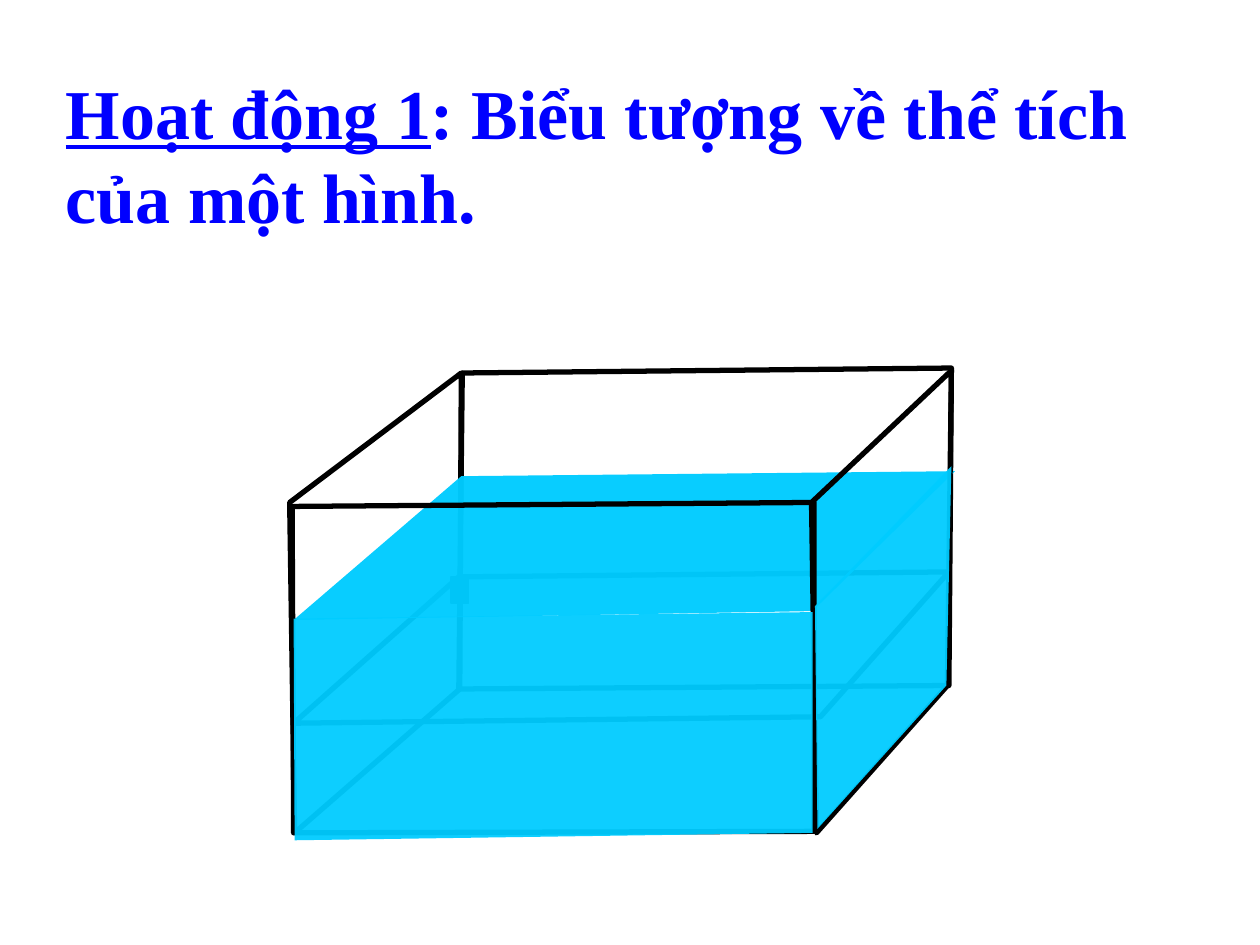
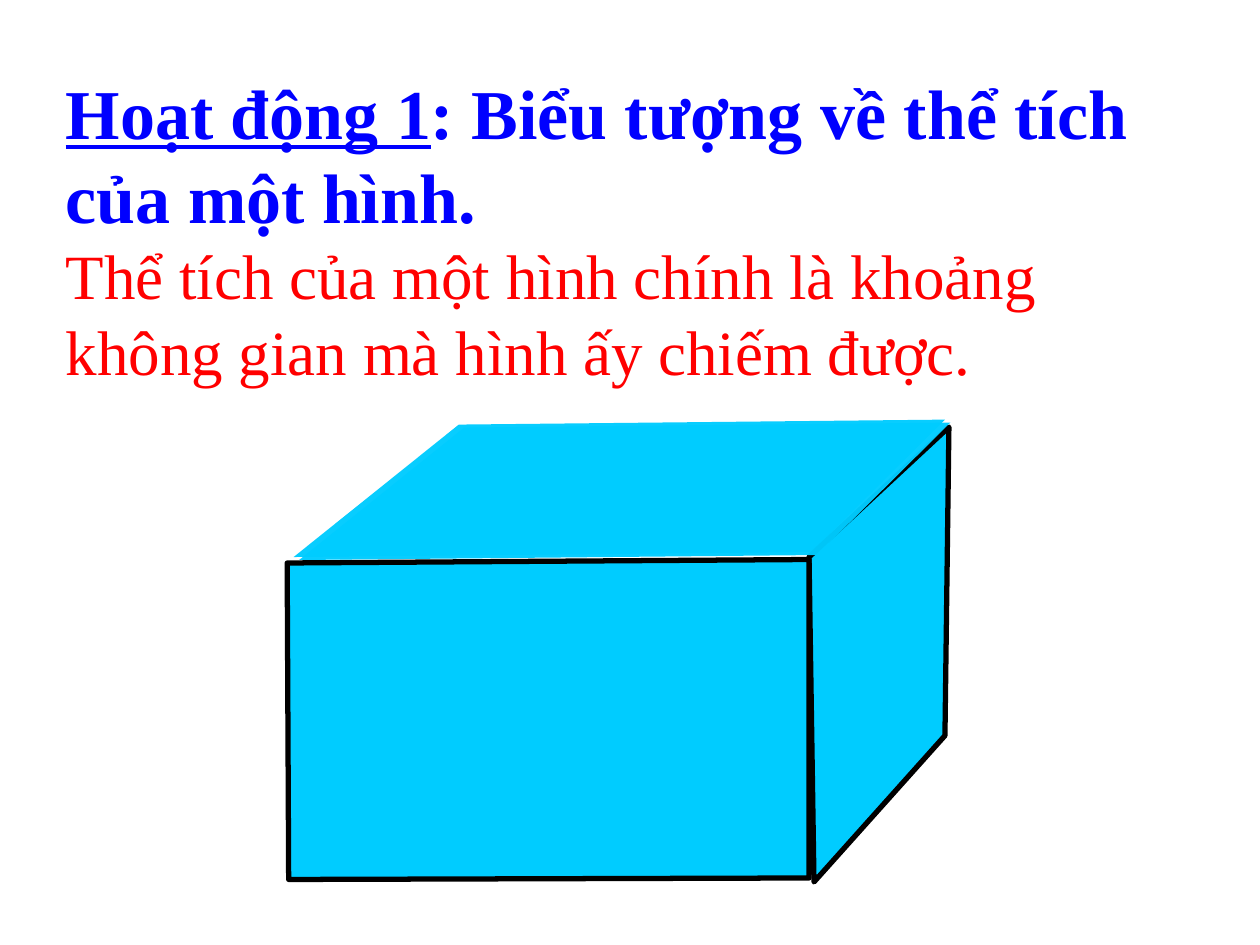
from dataclasses import dataclass

from pptx import Presentation
from pptx.dml.color import RGBColor
from pptx.enum.shapes import MSO_SHAPE
from pptx.enum.text import MSO_ANCHOR, MSO_AUTO_SIZE, PP_ALIGN
from pptx.oxml.ns import qn
from pptx.util import Cm, Pt
from lxml.etree import SubElement


@dataclass(frozen=True)
class Theme:
    """Colours, font and sizes used on every slide."""
    font: str = "Times New Roman"
    heading: RGBColor = RGBColor(0x00, 0x00, 0xFF)
    definition: RGBColor = RGBColor(0xFF, 0x00, 0x00)
    water: RGBColor = RGBColor(0x00, 0xCC, 0xFF)
    edge: RGBColor = RGBColor(0x00, 0x00, 0x00)
    heading_size: Pt = Pt(40)
    definition_size: Pt = Pt(36)
    edge_width: Pt = Pt(3)


THEME = Theme()
TITLE_ONLY, TITLE_AND_BODY = 5, 1
TEXT_LEFT, TEXT_WIDTH = Cm(1.07), Cm(23.5)

TANK_BACK_FACES = [
    [(5.84, 10.13), (9.3, 7.52), (9.27, 13.89), (5.94, 16.79)],
    [(9.25, 13.89), (19.13, 13.82), (19.18, 7.42), (9.32, 7.52)],
    [(5.92, 14.58), (9.25, 11.63), (19.13, 11.53), (16.54, 14.45)],
]
TANK_FRONT = [(5.92, 16.79), (16.41, 16.76), (16.41, 10.13), (5.89, 10.21)]
TANK_SIDE = [(16.36, 10.13), (19.18, 7.47), (19.1, 13.82), (16.46, 16.79)]
WATER_TOP = [(5.92, 12.5), (9.3, 9.6), (19.25, 9.5), (16.38, 12.32)]
WATER_FRONT = [(5.92, 12.47), (16.38, 12.34), (16.38, 16.79), (5.94, 16.94)]
WATER_SIDE = [(19.18, 9.4), (16.43, 12.22), (16.48, 16.71), (19.08, 13.82)]

BLOCK_TOP = [(5.92, 11.23), (9.25, 8.56), (19.05, 8.46), (16.36, 11.13)]
BLOCK_SIDE = [(16.31, 11.23), (19.13, 8.61), (19.05, 14.83), (16.41, 17.78)]
BLOCK_FRONT = [(5.82, 17.73), (16.31, 17.7), (16.31, 11.28), (5.79, 11.35)]


def place_text(sp, top, height):
    """Put a placeholder in the text column and return its paragraph."""
    sp.left, sp.top, sp.width, sp.height = TEXT_LEFT, top, TEXT_WIDTH, height
    tf = sp.text_frame
    tf.word_wrap = True
    tf.auto_size = MSO_AUTO_SIZE.NONE
    tf.vertical_anchor = MSO_ANCHOR.TOP
    p = tf.paragraphs[0]
    p.alignment = PP_ALIGN.LEFT
    p.space_before = Pt(0)
    return p


def add_run(p, text, size, color, bold=False, underline=False):
    """Add one formatted run to a paragraph."""
    r = p.add_run()
    r.text = text
    r.font.name, r.font.size = THEME.font, size
    r.font.bold, r.font.underline = bold, underline
    r.font.color.rgb = color


def add_heading(s):
    """Write the activity heading in the title placeholder."""
    p = place_text(s.shapes.title, Cm(1.27), Cm(3.6))
    style = (THEME.heading_size, THEME.heading, True)
    add_run(p, "Hoạt động 1", *style, underline=True)
    add_run(p, ": Biểu tượng về thể tích của một hình.", *style)


def add_definition(s, text):
    """Write an unbulleted definition in the body placeholder."""
    p = place_text(s.placeholders[1], Cm(4.65), Cm(3.5))
    pPr = p._p.get_or_add_pPr()
    pPr.set("marL", "0")
    pPr.set("indent", "0")
    SubElement(pPr, qn("a:buNone"))
    add_run(p, text, THEME.definition_size, THEME.definition)


def add_face(s, points, fill=None, opacity=100, outlined=False):
    """Draw a closed face from corner points in centimetres."""
    start, *rest = [(Cm(x), Cm(y)) for x, y in points]
    builder = s.shapes.build_freeform(*start)
    builder.add_line_segments(rest, close=True)
    sp = builder.convert_to_shape()
    sp.shadow.inherit = False
    if fill is None:
        sp.fill.background()
    else:
        sp.fill.solid()
        sp.fill.fore_color.rgb = fill
        if opacity < 100:
            color = sp._element.spPr.find(qn("a:solidFill"))[0]
            SubElement(color, qn("a:alpha")).set("val", str(opacity * 1000))
    if outlined:
        sp.line.color.rgb = THEME.edge
        sp.line.width = THEME.edge_width
    else:
        sp.line.fill.background()


def add_corner_mark(s):
    """Draw the small dark mark on the rear edge of the tank."""
    sp = s.shapes.add_shape(MSO_SHAPE.RECTANGLE, Cm(9.09), Cm(11.63), Cm(0.36), Cm(0.53))
    sp.shadow.inherit = False
    sp.fill.solid()
    sp.fill.fore_color.rgb = THEME.edge
    sp.line.color.rgb = THEME.edge
    sp.line.width = Pt(0.75)


def add_tank(s):
    """Draw the open tank partly filled with water."""
    add_corner_mark(s)
    for face in TANK_BACK_FACES:
        add_face(s, face, outlined=True)
    add_face(s, WATER_TOP, THEME.water, 97)
    for face in (TANK_FRONT, TANK_SIDE):
        add_face(s, face, outlined=True)
    for face in (WATER_FRONT, WATER_SIDE):
        add_face(s, face, THEME.water, 95)


def add_block(s):
    """Draw the solid block of water."""
    add_face(s, BLOCK_TOP, THEME.water, 97)
    for face in (BLOCK_SIDE, BLOCK_FRONT):
        add_face(s, face, THEME.water, outlined=True)
    shifted_top = [(x + 0.11, y + 0.06) for x, y in BLOCK_TOP]
    add_face(s, shifted_top, THEME.water, 97)


def add_slide(prs, layout):
    """Add a slide that carries the shared heading."""
    s = prs.slides.add_slide(prs.slide_layouts[layout])
    add_heading(s)
    return s


def main():
    """Build and save the two slides."""
    prs = Presentation()
    prs.slide_width, prs.slide_height = Cm(25.4), Cm(19.05)

    add_tank(add_slide(prs, TITLE_ONLY))

    s = add_slide(prs, TITLE_AND_BODY)
    add_definition(s, "Thể tích của một hình chính là khoảng không gian mà hình ấy chiếm được.")
    add_block(s)

    prs.save("out.pptx")


if __name__ == "__main__":
    main()
